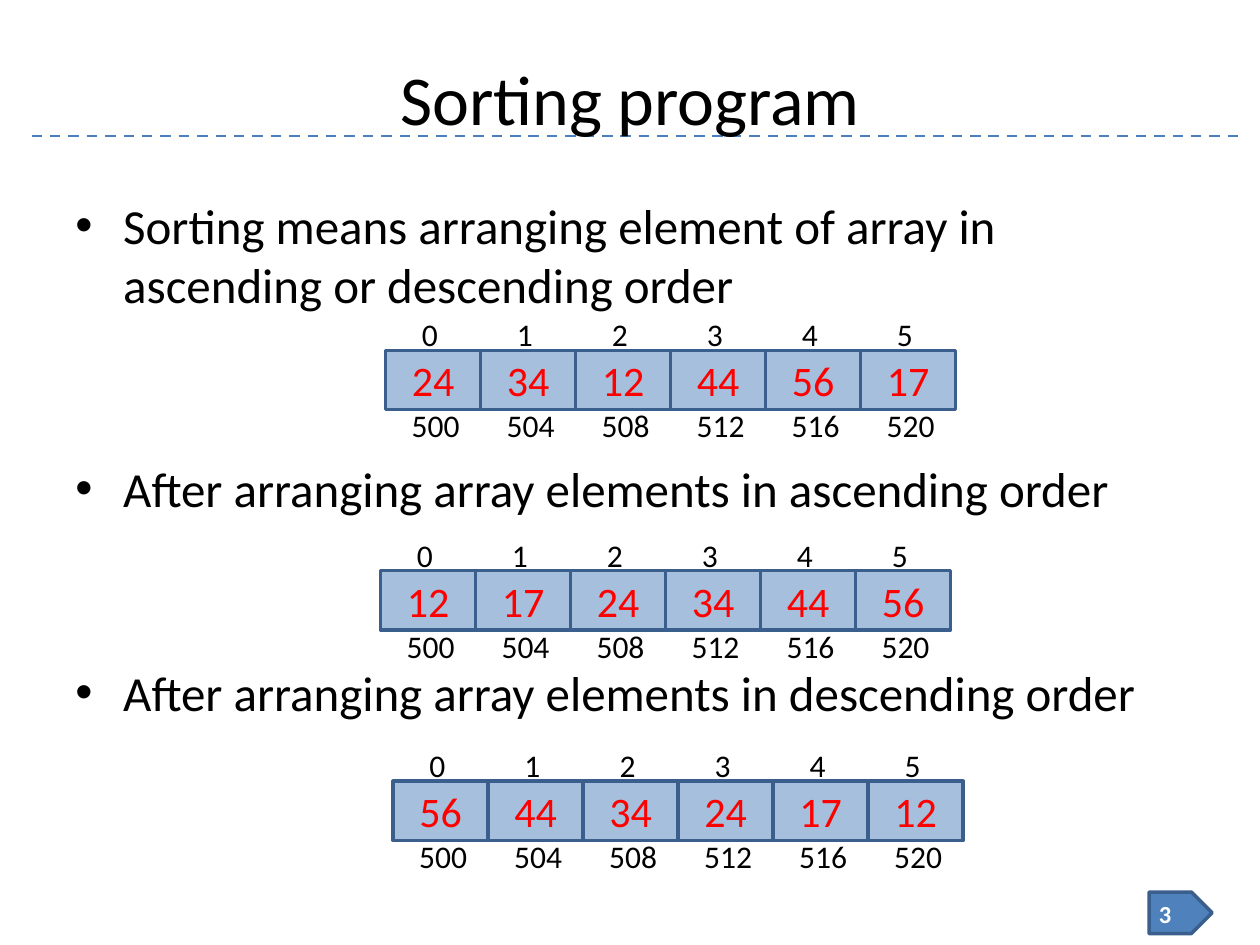
import pptx
import pptx.dml.color
import pptx.enum.dml
import pptx.enum.shapes
import pptx.enum.text
import pptx.oxml.ns
import pptx.util
from lxml import etree

RGBColor = pptx.dml.color.RGBColor
BLACK = RGBColor(0x00, 0x00, 0x00)
WHITE = RGBColor(0xFF, 0xFF, 0xFF)
RED = RGBColor(0xFF, 0x00, 0x00)
BLUE = RGBColor(0x4F, 0x81, 0xBD)
DARK_BLUE = RGBColor(0x3A, 0x5F, 0x8C)
RULE_BLUE = RGBColor(0x4B, 0x7E, 0xBC)

ALIGN = pptx.enum.text.PP_ALIGN
ANCHOR = pptx.enum.text.MSO_ANCHOR
SHAPE = pptx.enum.shapes.MSO_SHAPE
qn = pptx.oxml.ns.qn

CELL_PITCH = 7.54
CELL_HEIGHT = 6.27
INDEXES = [0, 1, 2, 3, 4, 5]
ADDRESSES = [500 + 4 * index for index in INDEXES]
BULLETS = [
    "Sorting means arranging element of array in ascending or descending order",
    "After arranging array elements in ascending order",
    "After arranging array elements in descending order",
]
ARRAYS = [
    (30.6, 37.07, [24, 34, 12, 44, 56, 17]),
    (30.2, 60.4, [12, 17, 24, 34, 44, 56]),
    (31.2, 82.67, [56, 44, 34, 24, 17, 12]),
]


class SlideBuilder:
    font = "Calibri"

    def __init__(self, presentation):
        self.width = presentation.slide_width
        self.height = presentation.slide_height
        self.slide = presentation.slides.add_slide(presentation.slide_layouts[6])

    def place(self, left, top, width, height):
        return (
            round(left * self.width / 100),
            round(top * self.height / 100),
            round(width * self.width / 100),
            round(height * self.height / 100),
        )

    def add_run(self, paragraph, text, size, color, bold=False):
        run = paragraph.add_run()
        run.text = text
        run.font.name = self.font
        run.font.size = pptx.util.Pt(size)
        run.font.color.rgb = color
        run.font.bold = bold

    def label(self, shape, text, size, color, align=ALIGN.CENTER, bold=False):
        frame = shape.text_frame
        frame.word_wrap = True
        frame.vertical_anchor = ANCHOR.MIDDLE
        frame.paragraphs[0].alignment = align
        self.add_run(frame.paragraphs[0], text, size, color, bold)

    def text(self, box, text, size, color=BLACK, parent=None, **style):
        shapes = (parent or self.slide).shapes
        self.label(shapes.add_textbox(*self.place(*box)), text, size, color, **style)

    def block(self, kind, box, parent=None, opacity=100):
        shape = (parent or self.slide).shapes.add_shape(kind, *self.place(*box))
        shape.shadow.inherit = False
        shape.fill.solid()
        shape.fill.fore_color.rgb = BLUE
        if opacity < 100:
            color = shape._element.spPr.find(qn("a:solidFill"))[0]
            etree.SubElement(color, qn("a:alpha"), val=str(opacity * 1000))
        shape.line.color.rgb = DARK_BLUE
        shape.line.width = pptx.util.Pt(2)
        return shape

    def dashed_rule(self, left, right, top):
        start_x, y, length, _ = self.place(left, top, right - left, 0)
        connector = self.slide.shapes.add_connector(
            pptx.enum.shapes.MSO_CONNECTOR.STRAIGHT, start_x, y, start_x + length, y
        )
        connector.line.color.rgb = RULE_BLUE
        connector.line.width = pptx.util.Pt(1.5)
        connector.line.dash_style = pptx.enum.dml.MSO_LINE.DASH
        etree.SubElement(connector._element.spPr, qn("a:effectLst"))

    def bullets(self, box, texts, size, gap):
        frame = self.slide.shapes.add_textbox(*self.place(*box)).text_frame
        frame.word_wrap = True
        indent = pptx.util.Inches(0.38)
        for position, text in enumerate(texts):
            paragraph = frame.add_paragraph() if position else frame.paragraphs[0]
            properties = paragraph._p.get_or_add_pPr()
            properties.set("marL", str(indent))
            properties.set("indent", str(-indent))
            etree.SubElement(properties, qn("a:buFont"), typeface="Arial")
            etree.SubElement(properties, qn("a:buChar"), char="•")
            if position:
                paragraph.space_before = pptx.util.Pt(gap)
            self.add_run(paragraph, text, size, BLACK)

    def array(self, left, top, values):
        group = self.slide.shapes.add_group_shape()
        for column, value in enumerate(values):
            box = (left + column * CELL_PITCH, top, CELL_PITCH, CELL_HEIGHT)
            cell = self.block(SHAPE.RECTANGLE, box, group, opacity=50)
            self.label(cell, str(value), 24, RED)
        for labels, shift, drop in ((INDEXES, -0.25, -4.83), (ADDRESSES, 0.2, 4.8)):
            for column, label in enumerate(labels):
                box = (left + shift + column * CELL_PITCH, top + drop, CELL_PITCH, CELL_HEIGHT)
                self.text(box, str(label), 18, parent=group)


def main():
    presentation = pptx.Presentation()
    presentation.slide_width = pptx.util.Inches(10)
    presentation.slide_height = pptx.util.Inches(7.5)
    builder = SlideBuilder(presentation)
    builder.dashed_rule(2.5, 98.3, 14.4)
    builder.block(SHAPE.PENTAGON, (91.2, 94.4, 5, 4.4))
    builder.text((91, 94.53, 6.7, 4.4), "3", 14, WHITE, align=ALIGN.LEFT, bold=True)
    builder.text((5, 5.07, 90, 10.4), "Sorting program", 40)
    builder.bullets((5, 20, 90, 69.33), BULLETS, 28, 83)
    for left, top, values in ARRAYS:
        builder.array(left, top, values)
    presentation.save("out.pptx")


if __name__ == "__main__":
    main()
